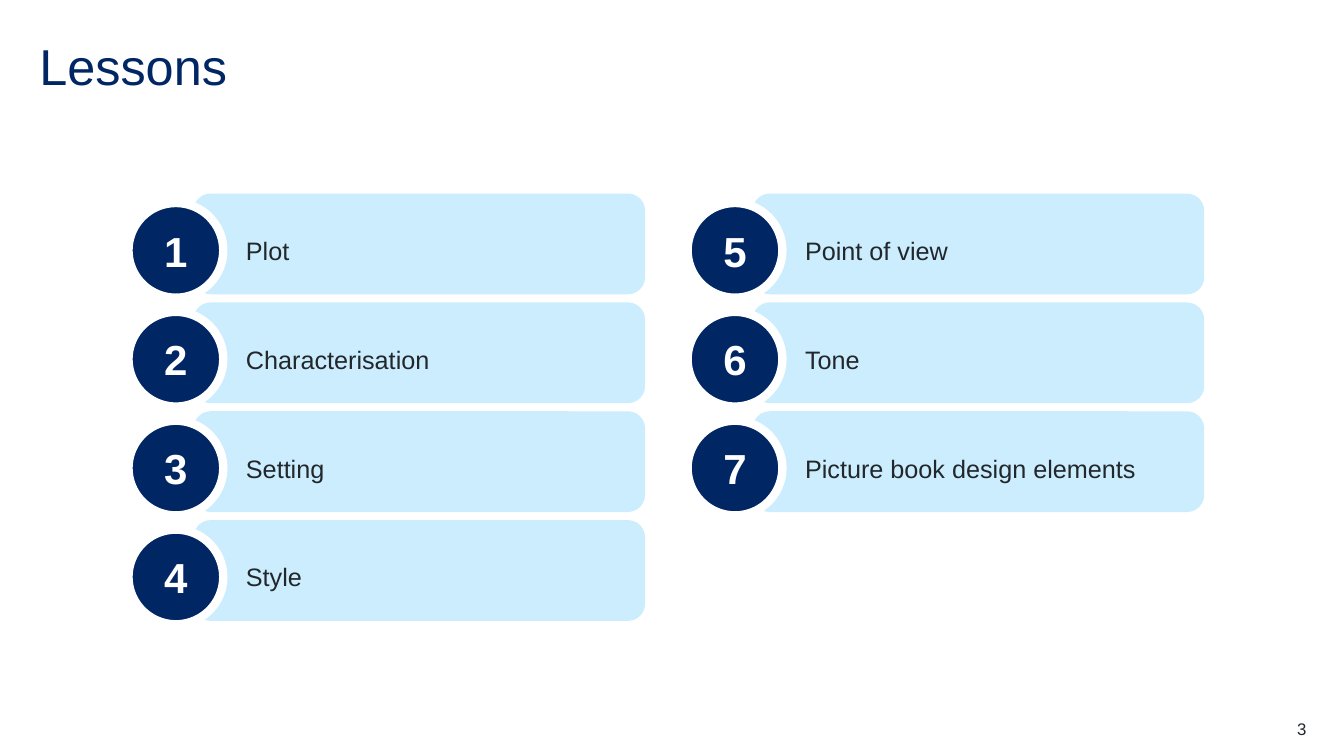
import pptx
import pptx.dml.color
import pptx.enum.shapes
import pptx.enum.text
import pptx.util

SHAPES = pptx.enum.shapes.MSO_SHAPE
ALIGN = pptx.enum.text.PP_ALIGN
ANCHOR = pptx.enum.text.MSO_ANCHOR
NAVY, SKY, INK, WHITE = "002664", "CBEDFD", "22272B", "FFFFFF"


def colour(value):
    return pptx.dml.color.RGBColor.from_string(value)


class LessonPage:
    font = "Arial"

    def __init__(self, deck):
        self.column = deck.slide_width / 100
        self.row = deck.slide_height / 100
        self.page = deck.slides.add_slide(deck.slide_layouts[5])

    def place(self, left, top, width, height):
        return (round(left * self.column), round(top * self.row),
                round(width * self.column), round(height * self.row))

    def set_text(self, box, text, size, ink, align=ALIGN.LEFT, anchor=ANCHOR.TOP, spacing=1.0, bold=False):
        frame = box.text_frame
        frame.word_wrap = True
        frame.auto_size = pptx.enum.text.MSO_AUTO_SIZE.NONE
        frame.vertical_anchor = anchor
        frame.margin_left = frame.margin_right = frame.margin_top = frame.margin_bottom = 0
        para = frame.paragraphs[0]
        para.text = text
        para.alignment = align
        para.line_spacing = spacing
        para.font.name = self.font
        para.font.size = pptx.util.Pt(size)
        para.font.bold = bold
        para.font.color.rgb = colour(ink)

    def title(self, text, *area):
        box = self.page.shapes.title
        box.left, box.top, box.width, box.height = self.place(*area)
        self.set_text(box, text, 36, NAVY, anchor=ANCHOR.MIDDLE, spacing=0.9)

    def shape(self, kind, fill, *area):
        box = self.page.shapes.add_shape(kind, *self.place(*area))
        box.shadow.inherit = False
        box.fill.solid()
        box.fill.fore_color.rgb = colour(fill)
        box.line.fill.background()
        return box

    def card(self, number, text, left, top):
        panel = self.shape(SHAPES.ROUNDED_RECTANGLE, SKY, left, top, 33.6, 13.33)
        panel.adjustments[0] = 0.17
        badge = self.shape(SHAPES.OVAL, NAVY, left - 4.84, top + 1.25, 7.05, 12.53)
        badge.line.color.rgb = colour(WHITE)
        badge.line.width = pptx.util.Pt(6)
        self.set_text(badge, str(number), 30, WHITE, ALIGN.CENTER, ANCHOR.MIDDLE, bold=True)
        label = self.shape(SHAPES.RECTANGLE, SKY, left + 3.9, top + 3.5, 27.2, 5.4)
        self.set_text(label, text, 18, INK, spacing=1.5)

    def page_number(self, text, *area):
        box = self.page.shapes.add_textbox(*self.place(*area))
        self.set_text(box, text, 12, INK, ALIGN.RIGHT)


def main():
    deck = pptx.Presentation()
    deck.slide_width = pptx.util.Inches(13.33)
    deck.slide_height = pptx.util.Inches(7.5)
    page = LessonPage(deck)
    page.title("Lessons", 2.92, 5.2, 94.2, 8)
    lessons = ["Plot", "Characterisation", "Setting", "Style",
               "Point of view", "Tone", "Picture book design elements"]
    for index, lesson in enumerate(lessons):
        column, row = divmod(index, 4)
        page.card(index + 1, lesson, 14.4 + 41.6 * column, 25.6 + 14.4 * row)
    page.page_number("3", 91.3, 95.07, 5.9, 2.67)
    deck.save("out.pptx")


if __name__ == "__main__":
    main()
